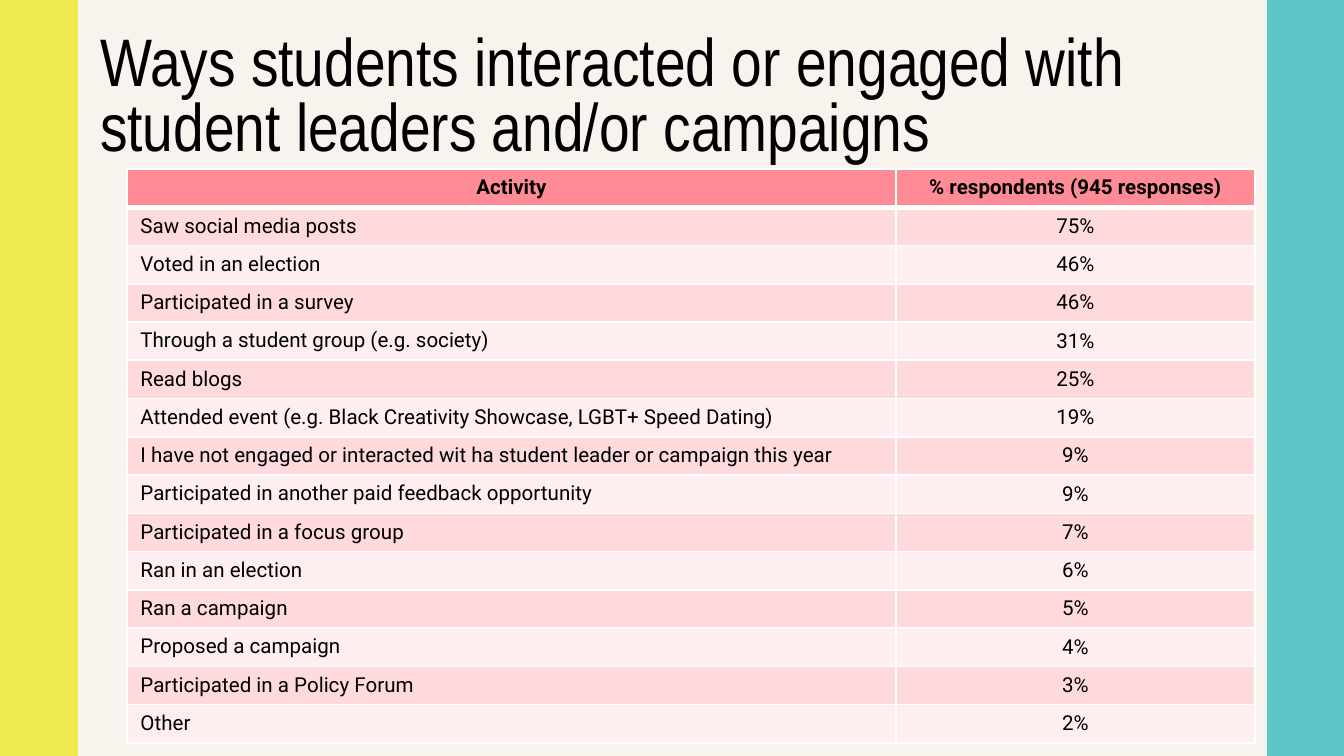
from lxml.etree import SubElement
from pptx import Presentation
from pptx.dml.color import RGBColor
from pptx.enum.shapes import MSO_SHAPE
from pptx.enum.text import MSO_ANCHOR, MSO_AUTO_SIZE, PP_ALIGN
from pptx.oxml.ns import qn
from pptx.util import Emu, Pt

TITLE = "Ways students interacted or engaged with student leaders and/or campaigns"
HEADER = ("Activity", "% respondents (945 responses)")
ACTIVITIES = [
    ("Saw social media posts", 75),
    ("Voted in an election", 46),
    ("Participated in a survey", 46),
    ("Through a student group (e.g. society)", 31),
    ("Read blogs", 25),
    ("Attended event (e.g. Black Creativity Showcase, LGBT+ Speed Dating)", 19),
    ("I have not engaged or interacted wit ha student leader or campaign this year", 9),
    ("Participated in another paid feedback opportunity", 9),
    ("Participated in a focus group", 7),
    ("Ran in an election", 6),
    ("Ran a campaign", 5),
    ("Proposed a campaign", 4),
    ("Participated in a Policy Forum", 3),
    ("Other", 2),
]

BLACK = RGBColor(0x00, 0x00, 0x00)
WHITE = RGBColor(0xFF, 0xFF, 0xFF)
CREAM = RGBColor(0xF8, 0xF3, 0xEC)
YELLOW = RGBColor(0xEE, 0xEA, 0x4D)
TEAL = RGBColor(0x5E, 0xC6, 0xC9)
CORAL = RGBColor(0xFF, 0x8B, 0x96)
BANDS = (RGBColor(0xFF, 0xDA, 0xDD), RGBColor(0xFF, 0xEE, 0xEF))

SLIDE_W, SLIDE_H = 1344, 756
BAR_W = 81
BARS = [(-3, YELLOW), (1267, TEAL)]
TITLE_BOX = (90, 30, 1165, 141)
TABLE_X, TABLE_Y, TABLE_H = 127, 169, 574
COL_WIDTHS = (769, 359)
TITLE_FONT = {"name": "Arial Narrow", "size": Pt(36), "bold": False}
CELL_FONT = {"name": "Roboto", "size": Pt(11)}


def px(n):
    return Emu(round(n * 914400 / 134.4))


def set_font(font, color, **values):
    for key, value in values.items():
        setattr(font, key, value)
    font.color.rgb = color


def add_borders(cell, bottom):
    tc_pr = cell._tc.get_or_add_tcPr()
    for side, width in (("L", 1), ("R", 1), ("T", 1), ("B", bottom)):
        ln = SubElement(tc_pr, qn(f"a:ln{side}"), w=str(Pt(width)))
        fill = SubElement(ln, qn("a:solidFill"))
        SubElement(fill, qn("a:srgbClr"), val=str(WHITE))


def add_bars(slide):
    for i, (x, color) in enumerate(BARS):
        sp = slide.shapes.add_shape(MSO_SHAPE.RECTANGLE, px(x), 0, px(BAR_W), px(SLIDE_H))
        sp.shadow.inherit = False
        sp.fill.solid()
        sp.fill.fore_color.rgb = color
        sp.line.fill.background()
        slide.shapes._spTree.insert(2 + i, sp._element)


def add_title(slide):
    sp = slide.shapes.title
    sp.left, sp.top, sp.width, sp.height = map(px, TITLE_BOX)
    tf = sp.text_frame
    tf.text = TITLE
    frame = {"word_wrap": True, "auto_size": MSO_AUTO_SIZE.SHAPE_TO_FIT_TEXT,
             "vertical_anchor": MSO_ANCHOR.TOP, "margin_left": px(10),
             "margin_right": px(10), "margin_top": px(5), "margin_bottom": px(5)}
    for key, value in frame.items():
        setattr(tf, key, value)
    p = tf.paragraphs[0]
    p.alignment = PP_ALIGN.LEFT
    p.line_spacing = 0.8
    set_font(p.runs[0].font, BLACK, **TITLE_FONT)


def add_activity_table(slide):
    rows = [HEADER] + [(name, f"{share}%") for name, share in ACTIVITIES]
    table = slide.shapes.add_table(len(rows), len(COL_WIDTHS), px(TABLE_X), px(TABLE_Y),
                                   px(sum(COL_WIDTHS)), px(TABLE_H)).table
    for col, width in zip(table.columns, COL_WIDTHS):
        col.width = px(width)
    for i, row in enumerate(rows):
        is_header = i == 0
        for j, text in enumerate(row):
            cell = table.cell(i, j)
            cell.text = text
            add_borders(cell, 3 if is_header else 1)
            cell.fill.solid()
            cell.fill.fore_color.rgb = CORAL if is_header else BANDS[(i - 1) % 2]
            centred = is_header or j == 1
            cell.vertical_anchor = MSO_ANCHOR.MIDDLE if j == 1 and not is_header else MSO_ANCHOR.TOP
            p = cell.text_frame.paragraphs[0]
            p.alignment = PP_ALIGN.CENTER if centred else PP_ALIGN.LEFT
            set_font(p.runs[0].font, BLACK, bold=is_header, **CELL_FONT)


def main():
    prs = Presentation()
    prs.slide_width, prs.slide_height = px(SLIDE_W), px(SLIDE_H)
    slide = prs.slides.add_slide(prs.slide_layouts[5])
    slide.background.fill.solid()
    slide.background.fill.fore_color.rgb = CREAM
    add_bars(slide)
    add_title(slide)
    add_activity_table(slide)
    prs.save("out.pptx")


if __name__ == "__main__":
    main()
